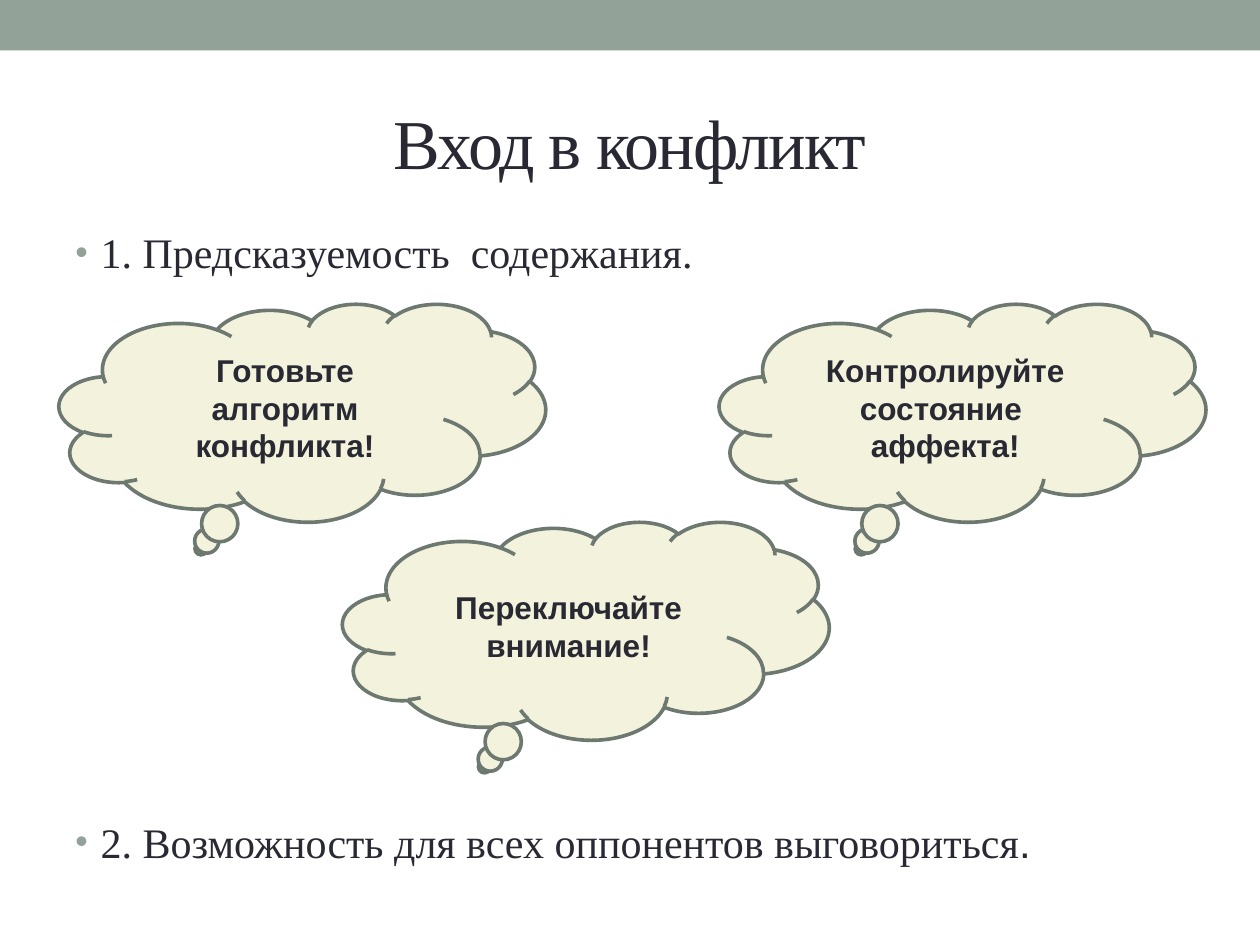
from dataclasses import dataclass

from lxml import etree
from pptx import Presentation
from pptx.dml.color import RGBColor
from pptx.enum.shapes import MSO_SHAPE
from pptx.enum.text import MSO_ANCHOR, PP_ALIGN
from pptx.oxml.ns import qn
from pptx.util import Inches, Pt

RECT, CLOUD = MSO_SHAPE.RECTANGLE, MSO_SHAPE.CLOUD_CALLOUT
MIDDLE, CENTER = MSO_ANCHOR.MIDDLE, PP_ALIGN.CENTER
WIDTH, HEIGHT = 10, 7.5
SERIF, SANS = "Times New Roman", "Arial"
COLORS = {"band": "93A299", "ink": "292934", "cloud": "F3F2DC", "outline": "6D7871"}
CLOUD_SIZE = (3.86, 1.73)


@dataclass
class Thought:
    left: float
    top: float
    text: str


@dataclass
class Point:
    text: str
    space_before: float
    ending: str = ""


THOUGHTS = [
    Thought(0.47, 2.41, "Готовьте алгоритм конфликта!"),
    Thought(5.71, 2.41, "Контролируйте состояние  аффекта!"),
    Thought(2.72, 4.14, "Переключайте внимание!"),
]
POINTS = [
    Point("1. Предсказуемость  содержания.", 4.8),
    Point("2. Возможность для всех оппонентов выговориться", 308, "."),
]


def rgb(name: str) -> RGBColor:
    return RGBColor.from_string(COLORS[name])


def box(left: float, top: float, width: float, height: float) -> list:
    return [Inches(v) for v in (left, top, width, height)]


def style(r, size: float, font: str, bold: bool = False) -> None:
    r.font.size, r.font.name, r.font.bold = Pt(size), font, bold
    r.font.color.rgb = rgb("ink")


def add_filled(s, kind, bounds: list, fill: str):
    sp = s.shapes.add_shape(kind, *bounds)
    sp.shadow.inherit = False
    sp.fill.solid()
    sp.fill.fore_color.rgb = rgb(fill)
    sp.line.fill.background()
    return sp


def add_title(s, text: str) -> None:
    tf = s.shapes.add_textbox(*box(0.5, 0.58, 9, 1.08)).text_frame
    tf.word_wrap, tf.vertical_anchor = True, MIDDLE
    tf.text = text
    p = tf.paragraphs[0]
    p.alignment = CENTER
    r = p.runs[0]
    style(r, 40, SERIF)
    r.font._element.set("spc", "-100")


def add_bullet(p) -> None:
    pPr = p._p.get_or_add_pPr()
    pPr.set("marL", str(Inches(0.2)))
    pPr.set("indent", str(-Inches(0.2)))
    color = etree.SubElement(pPr, qn("a:buClr"))
    etree.SubElement(color, qn("a:srgbClr"), val=COLORS["band"])
    etree.SubElement(pPr, qn("a:buSzPct"), val="85000")
    etree.SubElement(pPr, qn("a:buFont"), typeface=SANS)
    etree.SubElement(pPr, qn("a:buChar"), char="•")


def add_points(s, points: list[Point]) -> None:
    tf = s.shapes.add_textbox(*box(0.5, 1.75, 9, 5.33)).text_frame
    tf.word_wrap = True
    for i, point in enumerate(points):
        p = tf.add_paragraph() if i else tf.paragraphs[0]
        p.text = point.text
        p.space_before = Pt(point.space_before)
        style(p.runs[0], 24, SERIF)
        if point.ending:
            r = p.add_run()
            r.text = point.ending
            style(r, 24, SANS)
        add_bullet(p)


def add_thought(s, thought: Thought) -> None:
    sp = add_filled(s, CLOUD, box(thought.left, thought.top, *CLOUD_SIZE), "cloud")
    sp.line.color.rgb = rgb("outline")
    sp.line.width = Pt(2.08)
    tf = sp.text_frame
    tf.word_wrap, tf.vertical_anchor = True, MIDDLE
    tf.text = thought.text
    p = tf.paragraphs[0]
    p.alignment = CENTER
    style(p.runs[0], 18, SANS, bold=True)


def main() -> None:
    prs = Presentation()
    prs.slide_width, prs.slide_height = Inches(WIDTH), Inches(HEIGHT)
    s = prs.slides.add_slide(prs.slide_layouts[6])
    add_filled(s, RECT, box(0, 0, WIDTH, 0.4), "band")
    add_title(s, "Вход в конфликт")
    add_points(s, POINTS)
    for thought in THOUGHTS:
        add_thought(s, thought)
    prs.save("out.pptx")


if __name__ == "__main__":
    main()
